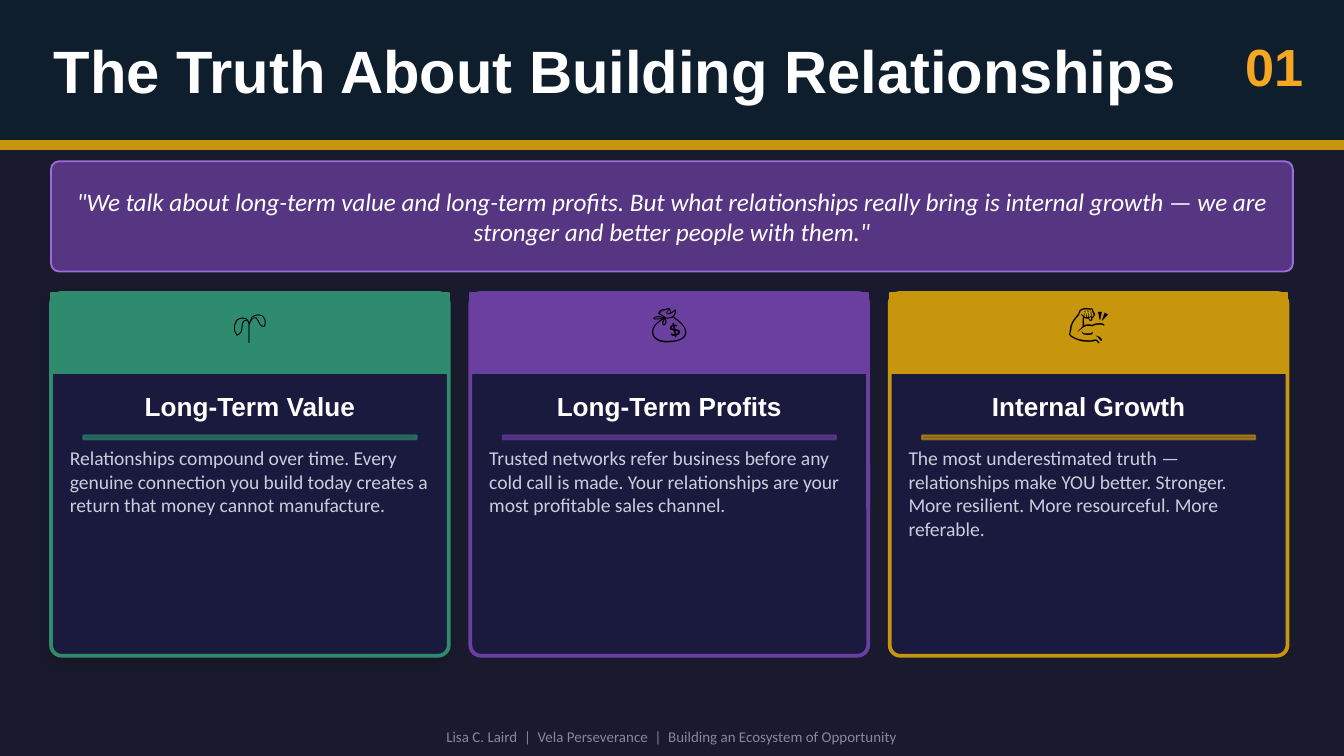
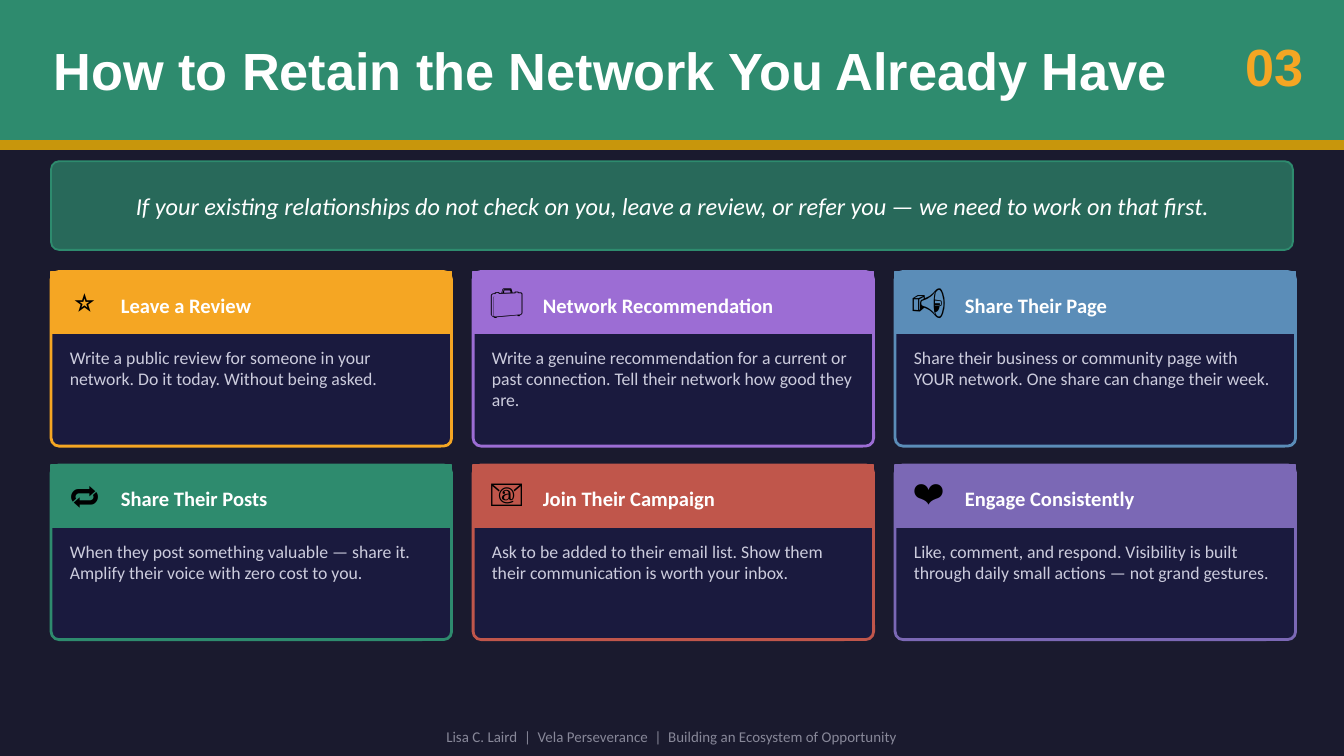
from lxml import etree
from pptx import Presentation
from pptx.dml.color import RGBColor
from pptx.enum.shapes import MSO_SHAPE
from pptx.enum.text import MSO_ANCHOR, MSO_AUTO_SIZE, PP_ALIGN
from pptx.oxml.ns import qn
from pptx.util import Inches, Pt

RECT, ROUNDED = MSO_SHAPE.RECTANGLE, MSO_SHAPE.ROUNDED_RECTANGLE
LEFT, CENTER, RIGHT = PP_ALIGN.LEFT, PP_ALIGN.CENTER, PP_ALIGN.RIGHT
TOP, MIDDLE = MSO_ANCHOR.TOP, MSO_ANCHOR.MIDDLE
NO_FIT = MSO_AUTO_SIZE.NONE

WIDTH = 10
HEIGHT = WIDTH * 9 / 16
MARGIN, COLUMN_GAP, ROW_GAP = 0.38, 0.16, 0.14
PADDING = 0.14
HEADER_HEIGHT, STRIPE_HEIGHT = 1.05, 0.06
QUOTE_TOP = 1.2

HEADING, BODY = "Arial", "Calibri"
NIGHT, NAVY, CARD = "1A1A2E", "0F1E2D", "1A1A3E"
WHITE, BLACK, PALE, GREY = "FFFFFF", "000000", "CCCCDD", "888899"
GREEN, GOLD, AMBER = "2E8B6E", "C8960C", "F5A623"
PURPLE, LILAC, BLUE = "6B3FA0", "9C6DD4", "5B8DB8"
RED, VIOLET = "C0564B", "7B68B5"

FOOTER = "Lisa C. Laird  |  Vela Perseverance  |  Building an Ecosystem of Opportunity"

VALUES = [
    ("🌱", "Long-Term Value", GREEN,
     "Relationships compound over time. Every genuine connection you build "
     "today creates a return that money cannot manufacture."),
    ("💰", "Long-Term Profits", PURPLE,
     "Trusted networks refer business before any cold call is made. "
     "Your relationships are your most profitable sales channel."),
    ("💪", "Internal Growth", GOLD,
     "The most underestimated truth — relationships make YOU better. "
     "Stronger. More resilient. More resourceful. More referable."),
]

ACTIONS = [
    ("⭐", "Leave a Review", AMBER,
     "Write a public review for someone in your network. "
     "Do it today. Without being asked."),
    ("💼", "Network Recommendation", LILAC,
     "Write a genuine recommendation for a current or past connection. "
     "Tell their network how good they are."),
    ("📢", "Share Their Page", BLUE,
     "Share their business or community page with YOUR network. "
     "One share can change their week."),
    ("🔁", "Share Their Posts", GREEN,
     "When they post something valuable — share it. "
     "Amplify their voice with zero cost to you."),
    ("📧", "Join Their Campaign", RED,
     "Ask to be added to their email list. "
     "Show them their communication is worth your inbox."),
    ("❤️", "Engage Consistently", VIOLET,
     "Like, comment, and respond. Visibility is built through "
     "daily small actions — not grand gestures."),
]


def rgb(color):
    return RGBColor.from_string(color)


def grid_cell(index, top, width, height, columns=3):
    row, column = divmod(index, columns)
    return (MARGIN + column * (width + COLUMN_GAP),
            top + row * (height + ROW_GAP))


def write(box, content, size, color, font=BODY, align=LEFT, anchor=MIDDLE,
          bold=False, italic=False):
    frame = box.text_frame
    frame.word_wrap = True
    frame.auto_size = NO_FIT
    frame.vertical_anchor = anchor
    frame.margin_left = frame.margin_right = 0
    frame.margin_top = frame.margin_bottom = 0
    paragraph = frame.paragraphs[0]
    paragraph.alignment = align
    run = paragraph.add_run()
    run.text = content
    run.font.name = font
    run.font.size = Pt(size)
    run.font.bold = bold
    run.font.italic = italic
    run.font.color.rgb = rgb(color)


def add_label(slide, area, content, size, color, **style):
    box = slide.shapes.add_textbox(*map(Inches, area))
    write(box, content, size, color, **style)


def add_panel(slide, area, fill, line=None, weight=1, radius=0,
              fill_opacity=100, line_opacity=100):
    panel = slide.shapes.add_shape(ROUNDED if radius else RECT,
                                   *map(Inches, area))
    if radius:
        panel.adjustments[0] = radius / min(area[2:])
    panel.shadow.inherit = False
    panel.fill.solid()
    panel.fill.fore_color.rgb = rgb(fill)
    panel.line.color.rgb = rgb(line or fill)
    panel.line.width = Pt(weight)
    colors = list(panel._element.spPr.iter(qn("a:srgbClr")))
    for color, opacity in zip(colors, (fill_opacity, line_opacity)):
        if opacity < 100:
            etree.SubElement(color, qn("a:alpha"), val=str(opacity * 1000))
    return panel


def add_soft_shadow(panel):
    effects = panel._element.spPr.find(qn("a:effectLst"))
    shadow = etree.SubElement(effects, qn("a:outerShdw"),
                              blurRad=str(Pt(8)), dist=str(Pt(3)),
                              dir=str(135 * 60000), algn="bl", rotWithShape="0")
    color = etree.SubElement(shadow, qn("a:srgbClr"), val=BLACK)
    etree.SubElement(color, qn("a:alpha"), val="18000")


def add_headed_slide(deck, title, number, band, title_size):
    slide = deck.slides.add_slide(deck.slide_layouts.get_by_name("Title Only"))
    slide.background.fill.solid()
    slide.background.fill.fore_color.rgb = rgb(NIGHT)
    add_panel(slide, (0, 0, WIDTH, HEADER_HEIGHT), band)
    add_panel(slide, (0, HEADER_HEIGHT, WIDTH, STRIPE_HEIGHT), GOLD)
    heading = slide.shapes.title
    heading.left, heading.top = Inches(0.4), Inches(0.12)
    heading.width, heading.height = Inches(8.5), Inches(0.8)
    write(heading, title, title_size, WHITE, font=HEADING, bold=True)
    slide.shapes._spTree.append(heading._element)
    add_label(slide, (8.8, 0.14, 0.9, 0.7), number, 28, AMBER,
              font=HEADING, align=RIGHT, bold=True)
    return slide


def add_footer(slide):
    add_label(slide, (0.3, 5.38, WIDTH - 0.6, 0.2), FOOTER, 8, GREY,
              align=CENTER)


def add_quote(slide, content, height, size, fill, line, opacity):
    width = WIDTH - 2 * MARGIN
    add_panel(slide, (MARGIN, QUOTE_TOP, width, height), fill, line,
              radius=0.06, fill_opacity=opacity)
    add_label(slide, (MARGIN + 0.17, QUOTE_TOP + 0.04, width - 0.34,
                      height - 0.08),
              content, size, WHITE, align=CENTER, italic=True)


def add_card(slide, area, color, head_height, weight, radius):
    left, top, width, _ = area
    card = add_panel(slide, area, CARD, color, weight, radius)
    add_panel(slide, (left, top, width, head_height), color)
    return card


def add_value_card(slide, index, value):
    icon, name, color, detail = value
    width, height = 2.96, 2.7
    left, top = grid_cell(index, 2.18, width, height)
    inner_left, inner_width = left + PADDING, width - 2 * PADDING
    card = add_card(slide, (left, top, width, height), color, 0.6, 2, 0.08)
    if index == 0:
        add_soft_shadow(card)
    add_label(slide, (left, top + 0.02, width, 0.38), icon, 20, BLACK,
              align=CENTER)
    add_label(slide, (inner_left, top + 0.64, inner_width, 0.4), name, 14,
              WHITE, font=HEADING, align=CENTER, bold=True)
    add_panel(slide, (left + 0.24, top + 1.06, width - 0.48, 0.03), color,
              fill_opacity=60, line_opacity=60)
    add_label(slide, (inner_left, top + 1.14, inner_width, 1.46), detail, 10.5,
              PALE, anchor=TOP)


def add_action_card(slide, index, action):
    icon, name, color, detail = action
    width, height = 2.98, 1.3
    left, top = grid_cell(index, 2.02, width, height)
    add_card(slide, (left, top, width, height), color, 0.46, 1.5, 0.06)
    add_label(slide, (left, top + 0.02, 0.5, 0.38), icon, 18, BLACK,
              align=CENTER)
    add_label(slide, (left + 0.52, top + 0.06, width - 0.62, 0.38), name, 11,
              WHITE, bold=True)
    add_label(slide, (left + PADDING, top + 0.56, width - 2 * PADDING, 0.68),
              detail, 9.5, PALE, anchor=TOP)


def main():
    deck = Presentation()
    deck.slide_width, deck.slide_height = Inches(WIDTH), Inches(HEIGHT)

    truth = add_headed_slide(deck, "The Truth About Building Relationships",
                             "01", NAVY, 32)
    add_quote(truth,
              '"We talk about long-term value and long-term profits. '
              "But what relationships really bring is internal growth — "
              'we are stronger and better people with them."',
              0.82, 13.5, PURPLE, LILAC, 75)
    for index, value in enumerate(VALUES):
        add_value_card(truth, index, value)
    add_footer(truth)

    retain = add_headed_slide(deck, "How to Retain the Network You Already Have",
                              "03", GREEN, 28)
    add_quote(retain,
              "If your existing relationships do not check on you, leave a "
              "review, or refer you — we need to work on that first.",
              0.66, 13, GREEN, GREEN, 70)
    for index, action in enumerate(ACTIONS):
        add_action_card(retain, index, action)
    add_footer(retain)

    deck.save("out.pptx")


if __name__ == "__main__":
    main()
